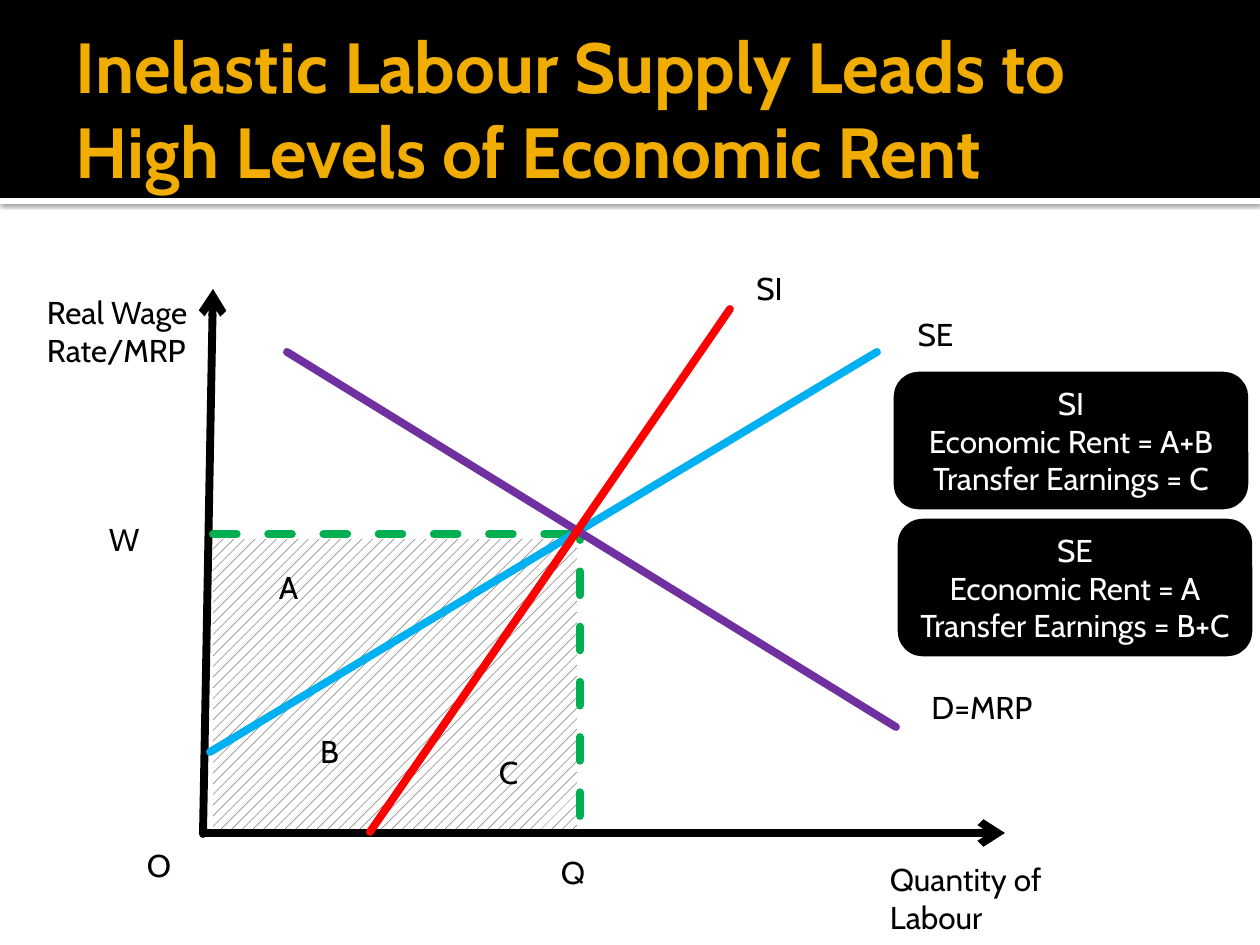
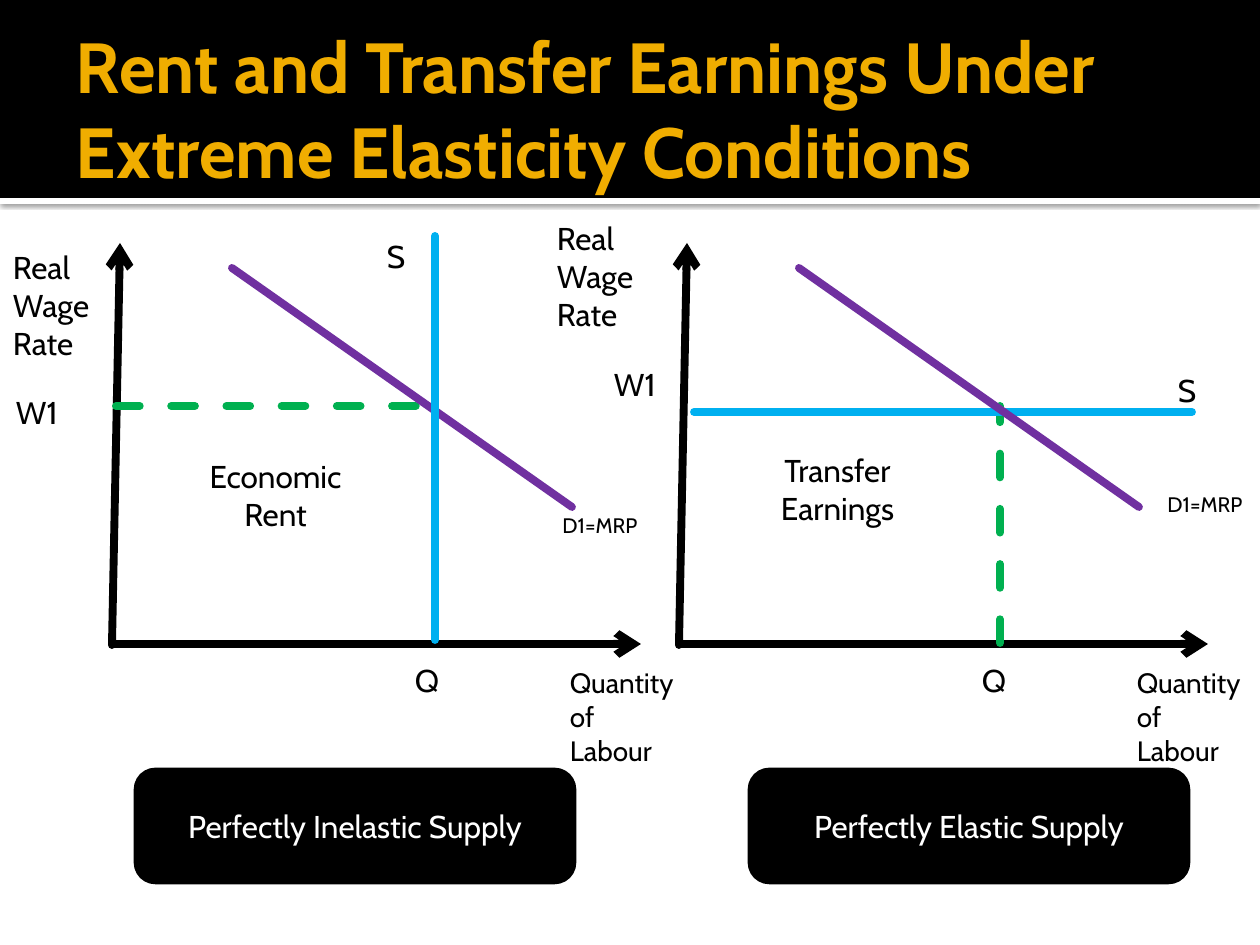
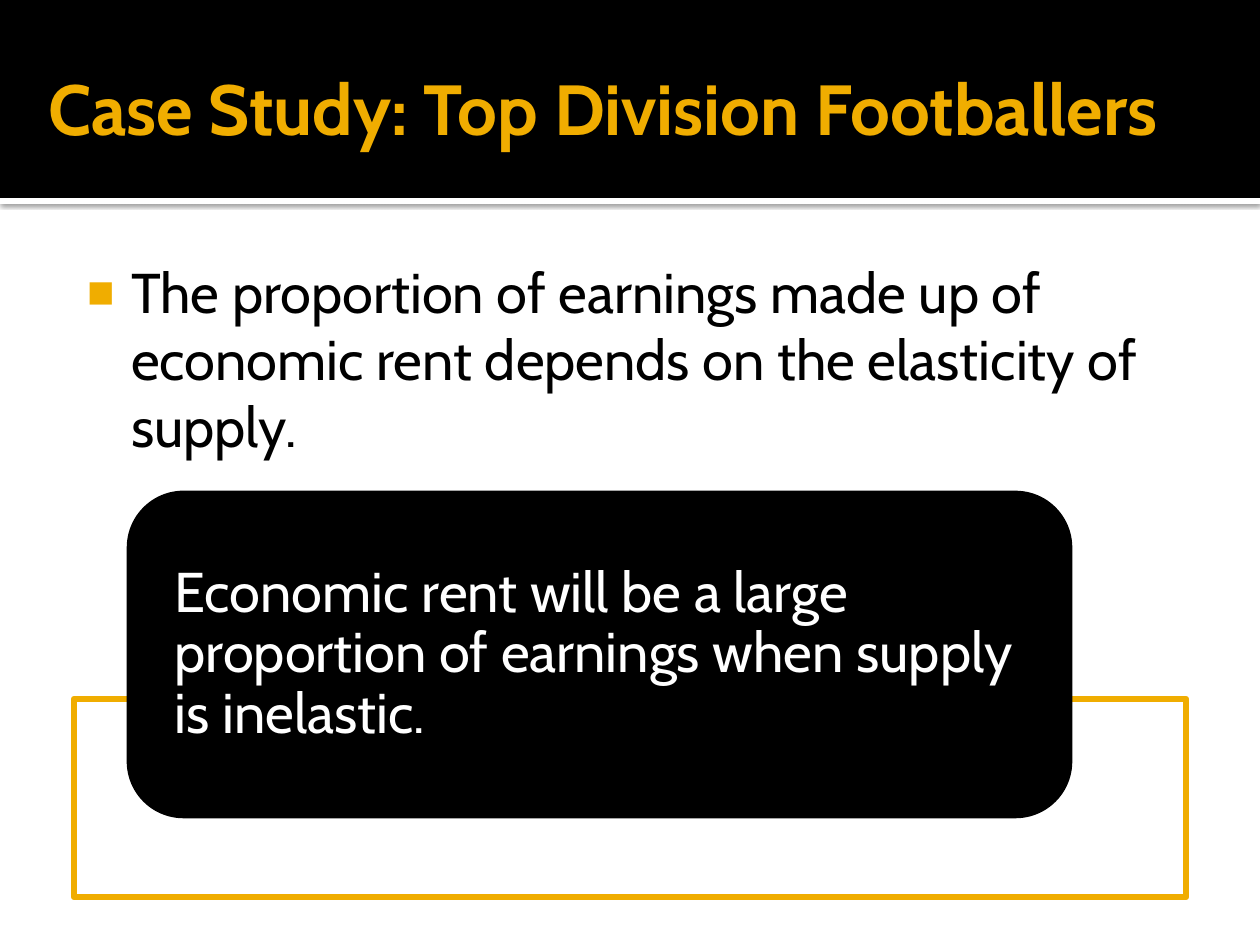
from lxml.etree import SubElement
from pptx import Presentation
from pptx.dml.color import RGBColor
from pptx.enum.dml import MSO_LINE, MSO_PATTERN
from pptx.enum.shapes import MSO_CONNECTOR, MSO_SHAPE
from pptx.enum.text import MSO_ANCHOR, MSO_AUTO_SIZE, PP_ALIGN
from pptx.oxml.ns import qn
from pptx.util import Pt

# Shared look
PX = 914400 / 126
W, H = 1260, 945
FONT = "Cabin"
BLACK, WHITE, GOLD = "000000", "FFFFFF", "F0AD00"
GREEN, BLUE, PURPLE, RED = "00B050", "00B0F0", "7030A0", "FF0000"
TITLE_BOX = (63, 21, 1134, 173)
TITLE_LAYOUT, BODY_LAYOUT = 5, 1

# Slide 1: lines are (from, to, colour, kind), labels are (text, box, format)
RENT_TITLE = "Inelastic Labour Supply Leads to High Levels of Economic Rent"
RENT_AREA = (213, 539, 364, 292)
RENT_LINES = [
    ((203, 834), (213, 289), BLACK, "arrow"),
    ((203, 833), (1005, 833), BLACK, "arrow"),
    ((213, 534), (576, 534), GREEN, "dash"),
    ((580, 816), (580, 534), GREEN, "dash"),
    ((877, 352), (210, 752), BLUE, ""),
    ((287, 352), (896, 727), PURPLE, ""),
    ((730, 309), (370, 832), RED, ""),
]
CENTRE = dict(align=PP_ALIGN.CENTER)
RENT_LABELS = [
    ("Real Wage Rate/MRP", (34, 287, 169, 89), {}),
    ("Quantity of Labour", (877, 854, 208, 89), {}),
    ("Q", (548, 847, 67, 50), {}),
    ("W", (96, 514, 97, 50), {}),
    ("O", (134, 840, 67, 50), {}),
    ("SE", (896, 309, 79, 50), CENTRE),
    ("SI", (730, 263, 79, 50), CENTRE),
    ("D=MRP", (897, 682, 170, 50), CENTRE),
    ("A", (249, 562, 79, 50), CENTRE),
    ("B", (290, 726, 79, 50), CENTRE),
    ("C", (469, 747, 79, 50), CENTRE),
]
RENT_CARDS = [
    ("SI\nEconomic Rent = A+B\nTransfer Earnings = C", (897, 375, 348, 131)),
    ("SE\nEconomic Rent = A\nTransfer Earnings = B+C", (901, 522, 348, 131)),
]

# Slide 2: two diagrams share axes, demand and quantity labels
EXTREME_TITLE = "Rent and Transfer Earnings Under Extreme Elasticity Conditions"
PANEL_STEP = 567
PANEL_AXES = [
    ((112, 645), (120, 243), BLACK, "arrow"),
    ((112, 644), (641, 644), BLACK, "arrow"),
]
PANEL_DEMAND = [((232, 268), (572, 507), PURPLE, "")]
PANEL_LABELS = [
    ("Q", (402, 655, 64, 50), {}),
    ("Quantity of Labour", (557, 660, 137, 81), dict(size=16)),
]
# Texts of each diagram's own labels, with sizes and formats
OWN_LABELS = [
    ("Real Wage Rate", (137, 66), {}),
    ("W1", (106, 50), {}),
    ("D1=MRP", (112, 38), dict(size=12, **CENTRE)),
    ("S", (78, 38), CENTRE),
]
PANELS = [
    dict(
        under=[((116, 406), (435, 406), GREEN, "dash")],
        over=[((435, 236), (435, 640), BLUE, "")],
        spots=[(0, 242), (3, 387), (544, 507), (357, 231)],
        area=("Economic Rent", (189, 451, 173, 89), CENTRE),
        card=("Perfectly Inelastic Supply", (137, 771, 436, 110)),
    ),
    dict(
        under=[((1000, 643), (1000, 406), GREEN, "dash"),
               ((1192, 412), (694, 412), BLUE, "")],
        over=[],
        spots=[(544, 213), (601, 359), (1149, 486), (1148, 365)],
        area=("Transfer Earnings", (751, 445, 173, 89), CENTRE),
        card=("Perfectly Elastic Supply", (751, 771, 436, 110)),
    ),
]

# Slide 3
CASE_TITLE = "Case Study: Top Division Footballers"
CASE_POINT = ("The proportion of earnings made up of economic rent "
              "depends on the elasticity of supply.")
CASE_ANSWER = ("Economic rent will be a large proportion of earnings "
               "when supply is inelastic.")


def emu(*lengths):
    return [round(n * PX) for n in lengths]


def rgb(color):
    return RGBColor.from_string(color)


def write(tf, text, size=18, color=BLACK, bold=False, align=PP_ALIGN.LEFT,
          anchor=MSO_ANCHOR.TOP, insets=(13, 6, 13, 6), spacing=1.0,
          fit=MSO_AUTO_SIZE.NONE):
    tf.word_wrap = True
    tf.auto_size = fit
    tf.vertical_anchor = anchor
    tf.margin_left, tf.margin_top, tf.margin_right, tf.margin_bottom = emu(*insets)
    for i, line in enumerate(text.split("\n")):
        p = tf.add_paragraph() if i else tf.paragraphs[0]
        p.alignment, p.line_spacing, p.space_before = align, spacing, Pt(0)
        r = p.add_run()
        r.text = line
        r.font.name, r.font.size, r.font.bold = FONT, Pt(size), bold
        r.font.color.rgb = rgb(color)


def add_box(s, box, fill, line=None, kind=MSO_SHAPE.RECTANGLE):
    sp = s.shapes.add_shape(kind, *emu(*box))
    sp.shadow.inherit = False
    sp.fill.solid()
    sp.fill.fore_color.rgb = rgb(fill)
    if line:
        sp.line.color.rgb = rgb(line)
        sp.line.width = Pt(3.78)
    else:
        sp.line.fill.background()
    return sp


def add_card(s, text, box, **fmt):
    sp = add_box(s, box, BLACK, BLACK, MSO_SHAPE.ROUNDED_RECTANGLE)
    fmt = dict(color=WHITE, anchor=MSO_ANCHOR.MIDDLE, **{**CENTRE, **fmt})
    write(sp.text_frame, text, **fmt)


def add_labels(s, labels, dx=0):
    for text, (x, y, w, h), fmt in labels:
        tb = s.shapes.add_textbox(*emu(x + dx, y, w, h))
        write(tb.text_frame, text, fit=MSO_AUTO_SIZE.SHAPE_TO_FIT_TEXT, **fmt)


def add_lines(s, lines, dx=0):
    for (x1, y1), (x2, y2), color, kind in lines:
        c = s.shapes.add_connector(MSO_CONNECTOR.STRAIGHT,
                                   *emu(x1 + dx, y1, x2 + dx, y2))
        c.line.color.rgb = rgb(color)
        c.line.width = Pt(4.5)
        if kind == "dash":
            c.line.dash_style = MSO_LINE.DASH
        spPr = c.element.spPr
        ln = spPr.find(qn("a:ln"))
        ln.set("cap", "rnd")
        SubElement(ln, qn("a:round"))
        if kind == "arrow":
            SubElement(ln, qn("a:tailEnd"), type="arrow")
        SubElement(spPr, qn("a:effectLst"))


def add_bands(prs, s):
    """Build the header bands and move them to the back of the master."""
    rule = add_box(s, (0, 198, W, 6), WHITE)
    effects = rule.element.spPr.find(qn("a:effectLst"))
    shadow = SubElement(effects, qn("a:outerShdw"), blurRad=str(Pt(2.5)),
                        dist=str(Pt(0.8)), dir="5400000", rotWithShape="0")
    color = SubElement(shadow, qn("a:srgbClr"), val=BLACK)
    SubElement(color, qn("a:alpha"), val="60000")
    header = add_box(s, (0, 0, W, 198), BLACK)
    tree = prs.slide_master.element.cSld.spTree
    for i, band in enumerate((rule, header)):
        band.element.nvSpPr.cNvPr.set("id", str(50 + i))
        tree.insert(2 + i, band.element)


def add_slide(prs, title, layout=TITLE_LAYOUT, box=TITLE_BOX):
    s = prs.slides.add_slide(prs.slide_layouts[layout])
    place(s.shapes.title, box)
    write(s.shapes.title.text_frame, title, size=40.5, color=GOLD, bold=True,
          anchor=MSO_ANCHOR.MIDDLE, insets=(13, 6, 6, 6))
    return s


def place(sp, box):
    sp.left, sp.top, sp.width, sp.height = emu(*box)


def add_bullet(p):
    pPr = p._p.get_or_add_pPr()
    left, hang = emu(60, 44)
    pPr.set("marL", str(left))
    pPr.set("indent", str(-hang))
    SubElement(SubElement(pPr, qn("a:buClr")), qn("a:srgbClr"), val=GOLD)
    SubElement(pPr, qn("a:buSzPct"), val="52000")
    SubElement(pPr, qn("a:buFont"), typeface=FONT)
    SubElement(pPr, qn("a:buChar"), char="■")


def build_rent(prs):
    s = add_slide(prs, RENT_TITLE)
    add_bands(prs, s)
    fill = add_box(s, RENT_AREA, WHITE).fill
    fill.patterned()
    fill.pattern = MSO_PATTERN.PERCENT_20
    fill.fore_color.rgb, fill.back_color.rgb = rgb(BLACK), rgb(WHITE)
    add_lines(s, RENT_LINES)
    add_labels(s, RENT_LABELS)
    for text, box in RENT_CARDS:
        add_card(s, text, box)


def build_extremes(prs):
    s = add_slide(prs, EXTREME_TITLE)
    for i, panel in enumerate(PANELS):
        dx = i * PANEL_STEP
        add_lines(s, PANEL_AXES, dx)
        add_lines(s, panel["under"])
        add_lines(s, PANEL_DEMAND, dx)
        add_lines(s, panel["over"])
        add_labels(s, PANEL_LABELS, dx)
        add_labels(s, [(text, spot + size, fmt) for (text, size, fmt), spot
                       in zip(OWN_LABELS, panel["spots"])])
        add_labels(s, [panel["area"]])
        add_card(s, *panel["card"])


def build_case(prs):
    s = add_slide(prs, CASE_TITLE, BODY_LAYOUT, (35, 21, 1162, 173))
    body = s.placeholders[1]
    place(body, (63, 244, 1134, 228))
    write(body.text_frame, CASE_POINT, size=32, insets=(8, 13, 13, 6))
    add_bullet(body.text_frame.paragraphs[0])
    add_box(s, (74, 699, 1112, 198), WHITE, GOLD)
    add_card(s, CASE_ANSWER, (130, 494, 939, 321), size=32, spacing=0.9,
             align=PP_ALIGN.LEFT, insets=(29, 0, 29, 0))


def main():
    prs = Presentation()
    prs.slide_width, prs.slide_height = emu(W, H)
    build_rent(prs)
    build_extremes(prs)
    build_case(prs)
    prs.save("out.pptx")


if __name__ == "__main__":
    main()
